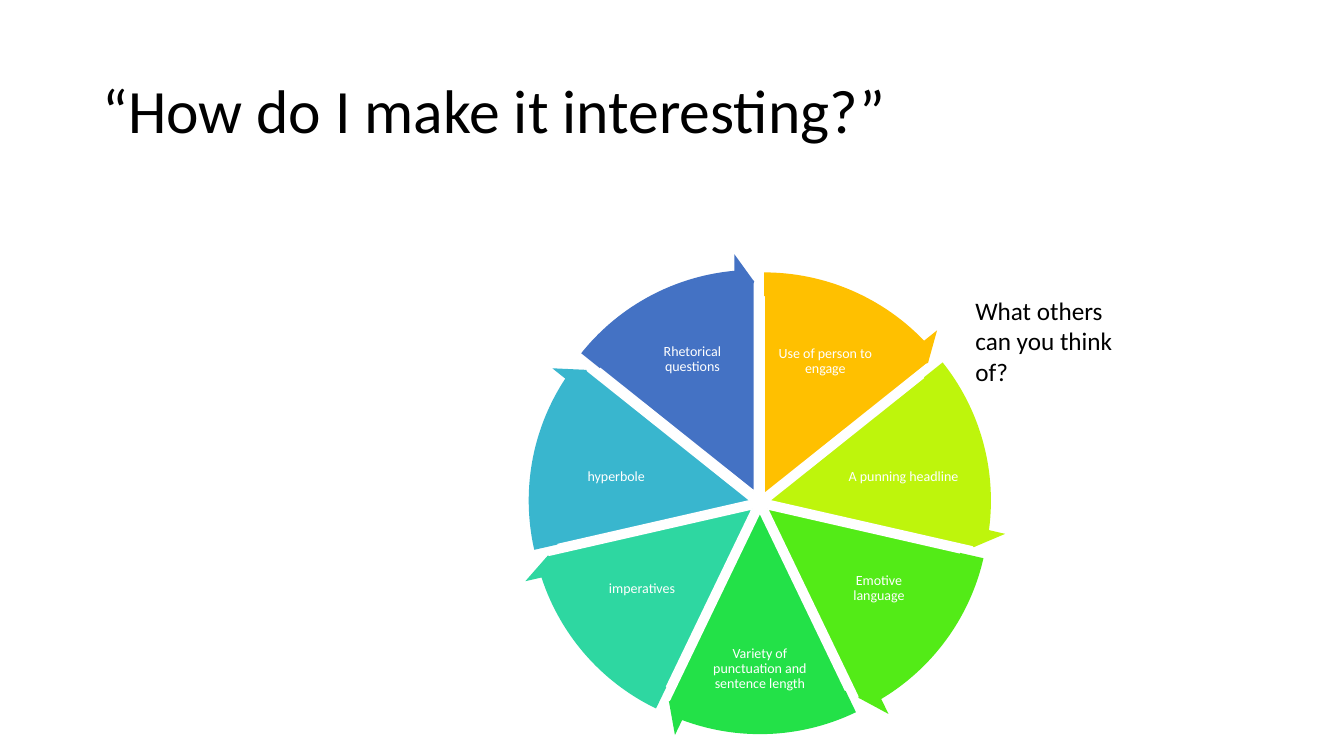
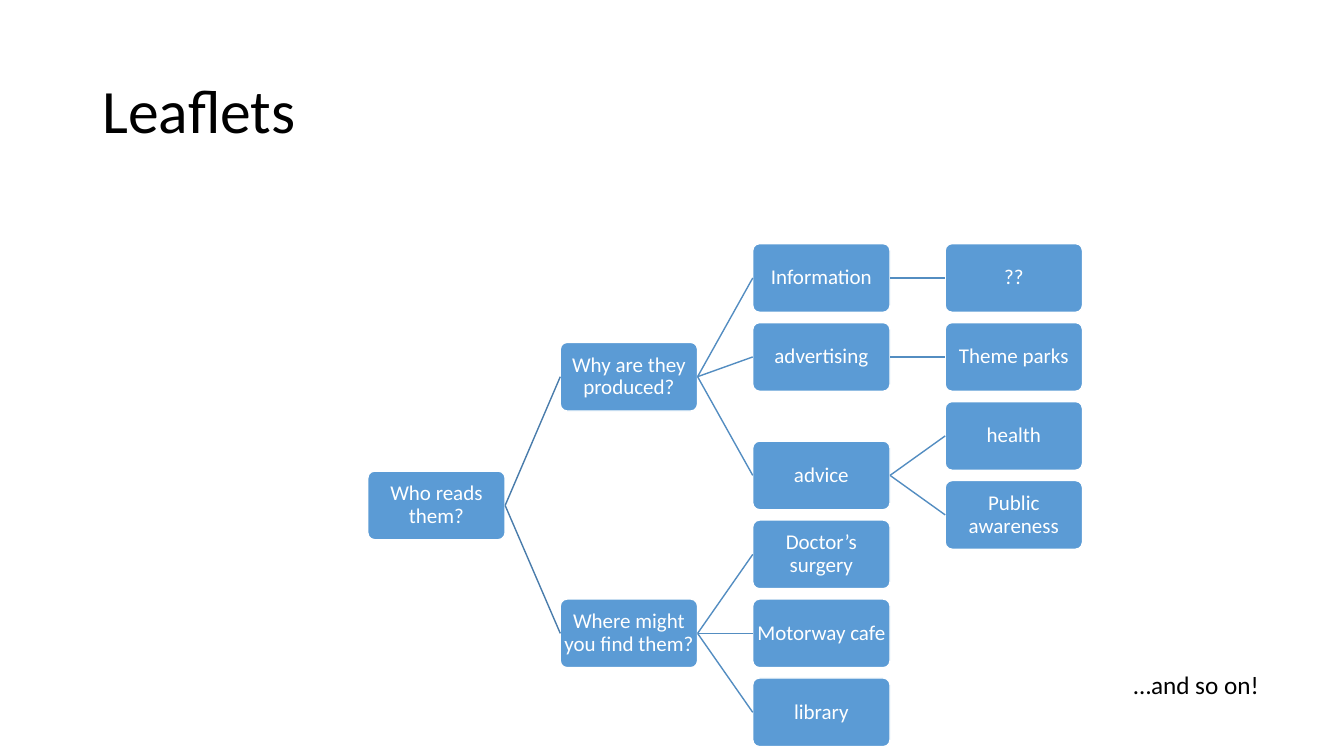
"""Build two slides on writing: a wheel of techniques and a tree about leaflets."""
from math import cos, radians, sin

from lxml.etree import SubElement
from pptx import Presentation
from pptx.dml.color import RGBColor
from pptx.enum.shapes import MSO_CONNECTOR, MSO_SHAPE
from pptx.enum.text import MSO_ANCHOR, PP_ALIGN
from pptx.oxml.ns import qn
from pptx.util import Cm, Pt

COLOURS = {
    "text": "000000",
    "white": "FFFFFF",
    "box": "5B9BD5",
    "trunk": "497CAB",
    "branch": "538DC1",
    "amber": "FFC000",
    "lime": "BEF50C",
    "leaf": "53EB17",
    "green": "23E148",
    "mint": "2ED7A1",
    "cyan": "39B6CE",
    "blue": "4472C4",
}
COLOURS = {role: RGBColor.from_string(value) for role, value in COLOURS.items()}


def write(holder, text, size, colour="text", spacing=0.9, label=False):
    frame = holder.text_frame
    frame.word_wrap = True
    paragraph = frame.paragraphs[0]
    paragraph.text = text
    paragraph.line_spacing = spacing
    paragraph.alignment = PP_ALIGN.CENTER if label else PP_ALIGN.LEFT
    paragraph.font.name = "Calibri"
    paragraph.font.size = Pt(size)
    paragraph.font.color.rgb = COLOURS[colour]
    if label:
        frame.vertical_anchor = MSO_ANCHOR.MIDDLE
        frame.margin_left = frame.margin_right = Cm(0.03)
        frame.margin_top = frame.margin_bottom = Cm(0.03)


def paint(shape, fill, outlined=True):
    shape.shadow.inherit = False
    shape.fill.solid()
    shape.fill.fore_color.rgb = COLOURS[fill]
    if outlined:
        shape.line.color.rgb = COLOURS["white"]
        shape.line.width = Pt(1)
    else:
        shape.line.fill.background()


deck = Presentation()
deck.slide_width, deck.slide_height = Cm(33.87), Cm(19.05)

pages = [
    ("“How do I make it interesting?”", "What others can you think of?", (24.33, 7.32, 4.6, 2.57)),
    ("Leaflets", "…and so on!", (28.32, 16.74, 4.19, 1.02)),
]
slides = []
for heading, remark, place in pages:
    slide = deck.slides.add_slide(deck.slide_layouts[6])
    title = slide.shapes.add_textbox(Cm(2.33), Cm(1.02), Cm(29.21), Cm(3.68))
    write(title, heading, 44)
    title.text_frame.vertical_anchor = MSO_ANCHOR.MIDDLE
    note = slide.shapes.add_textbox(*map(Cm, place))
    write(note, remark, 18, spacing=1.0)
    slides.append(slide)
wheel, tree = (slide.shapes for slide in slides)

techniques = [
    ("Use of person to engage", "amber", 0.25, 1.65, -3.56, 2.54, 2.03),
    ("A punning headline", "lime", 0.25, 3.62, -0.64, 2.92, 1.78),
    ("Emotive language", "leaf", 0.25, 3, 2.16, 2.54, 1.98),
    ("Variety of punctuation and sentence length", "green", 0.25, 0, 4.19, 2.46, 1.78),
    ("imperatives", "mint", 0.25, -2.97, 2.16, 2.54, 1.98),
    ("hyperbole", "cyan", 0.25, -3.62, -0.64, 2.92, 1.78),
    ("Rhetorical questions", "blue", 0.32, -1.7, -3.61, 2.54, 2.03),
]
HUB_X, HUB_Y = 19.15, 12.67
SLICE_RADIUS, ARROW_RADIUS = 5.33, 6
ANGLE_UNIT = 0.6
sweep = 360 / len(techniques)

arrows = []
for index, (technique, colour, push, dx, dy, width, height) in enumerate(techniques):
    start = (270 + index * sweep) % 360
    stop = (start + sweep) % 360
    middle = radians(start + sweep / 2)
    x, y = HUB_X + push * cos(middle), HUB_Y + push * sin(middle)
    wedge = wheel.add_shape(
        MSO_SHAPE.PIE, Cm(x - SLICE_RADIUS), Cm(y - SLICE_RADIUS), Cm(2 * SLICE_RADIUS), Cm(2 * SLICE_RADIUS)
    )
    wedge.adjustments[0] = start * ANGLE_UNIT
    wedge.adjustments[1] = stop * ANGLE_UNIT
    paint(wedge, colour)
    caption = wheel.add_textbox(
        Cm(HUB_X + dx - width / 2), Cm(HUB_Y + dy - height / 2), Cm(width), Cm(height)
    )
    write(caption, technique, 10, "white", label=True)
    arrows.append((colour, x, y, start, stop))

for colour, x, y, start, stop in arrows:
    arrow = wheel.add_shape(
        MSO_SHAPE.CIRCULAR_ARROW,
        Cm(x - ARROW_RADIUS), Cm(y - ARROW_RADIUS), Cm(2 * ARROW_RADIUS), Cm(2 * ARROW_RADIUS),
    )
    head = 3.28
    settings = (0.05, head, stop * ANGLE_UNIT - head, start * ANGLE_UNIT, 0.06)
    for position, setting in enumerate(settings):
        arrow.adjustments[position] = setting
    paint(arrow, colour, outlined=False)

questions = [
    ("Who reads them?", 0, 2.88, None),
    ("Why are they produced?", 1, 1.25, "Who reads them?"),
    ("Information", 2, 0, "Why are they produced?"),
    ("??", 3, 0, "Information"),
    ("advertising", 2, 1, "Why are they produced?"),
    ("Theme parks", 3, 1, "advertising"),
    ("advice", 2, 2.5, "Why are they produced?"),
    ("health", 3, 2, "advice"),
    ("Public awareness", 3, 3, "advice"),
    ("Where might you find them?", 1, 4.5, "Who reads them?"),
    ("Doctor’s surgery", 2, 3.5, "Where might you find them?"),
    ("Motorway cafe", 2, 4.5, "Where might you find them?"),
    ("library", 2, 5.5, "Where might you find them?"),
]
RIGHT_SIDE, LEFT_SIDE = 3, 1
boxes = {}
for question, column, row, parent in questions:
    box = tree.add_shape(
        MSO_SHAPE.ROUNDED_RECTANGLE,
        Cm(9.27 + 4.85 * column), Cm(6.14 + 1.99 * row), Cm(3.46), Cm(1.73),
    )
    box.adjustments[0] = 0.1
    paint(box, "box")
    write(box, question, 15, "white", label=True)
    boxes[question] = box
    if parent:
        branch = tree.add_connector(MSO_CONNECTOR.STRAIGHT, 0, 0, 0, 0)
        branch.begin_connect(boxes[parent], RIGHT_SIDE)
        branch.end_connect(box, LEFT_SIDE)
        branch.line.color.rgb = COLOURS["trunk" if column == 1 else "branch"]
        branch.line.width = Pt(1)
        SubElement(branch._element.spPr, qn("a:effectLst"))

deck.save("out.pptx")
